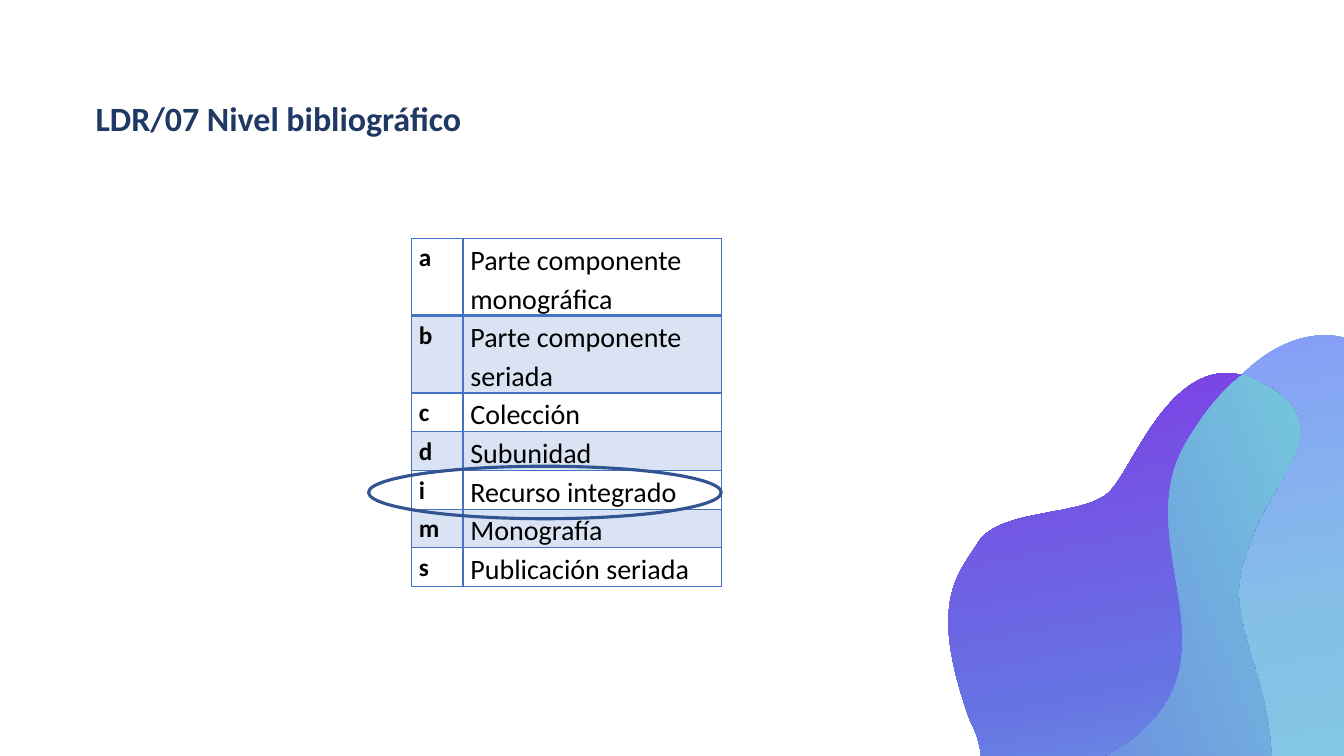
from copy import deepcopy
from math import cos, radians, sin

from pptx import Presentation
from pptx.dml.color import RGBColor
from pptx.enum.shapes import MSO_SHAPE
from pptx.enum.text import MSO_ANCHOR
from pptx.oxml.ns import qn
from pptx.oxml.xmlchemy import OxmlElement
from pptx.util import Emu, Pt

ELLIPSE = MSO_SHAPE.OVAL
MIDDLE = MSO_ANCHOR.MIDDLE
PX = 9525  # EMU per px, 1280 x 720 px slide
FONT = "Calibri"
BLOB_ROTATION = 52.2

NAVY = RGBColor(0x20, 0x38, 0x64)
BLACK = RGBColor(0x00, 0x00, 0x00)
BORDER_BLUE = RGBColor(0x44, 0x72, 0xC4)
BAND_BLUE = RGBColor(0xDA, 0xE3, 0xF3)
RING_BLUE = RGBColor(0x32, 0x54, 0x91)
AQUA = RGBColor(0x80, 0xDE, 0xDE)
SKY = RGBColor(0x85, 0xC1, 0xE7)
PERIWINKLE = RGBColor(0x87, 0x8C, 0xFF)
MINT = RGBColor(0x7C, 0xEF, 0xD8)
INDIGO = RGBColor(0x66, 0x72, 0xE4)
VIOLET = RGBColor(0x88, 0x2B, 0xE5)

LEVELS = [
    ("a", "Parte componente monográfica"),
    ("b", "Parte componente seriada"),
    ("c", "Colección"),
    ("d", "Subunidad"),
    ("i", "Recurso integrado"),
    ("m", "Monografía"),
    ("s", "Publicación seriada"),
]
COLUMN_WIDTHS = (49, 246)
TABLE_HEIGHT = 331
ROW_HEIGHT = 20  # rows grow to fit their text

# Bezier outlines as they lie on the slide:
# a start point, then two handles and an end point per curve
SHARED_EDGE = [
    (1096, 889), (1253, 835), (1210, 681), (1192, 626),
    (1176, 570), (1174, 556), (1196, 503),
    (1218, 450), (1277, 402), (1198, 363),
]
SKY_BLOB = [
    (1021, 729), (1236, 645), (1076, 520), (1142, 410),
    (1208, 299), (1283, 312), (1304, 335),
    (1325, 357), (1329, 380), (1297, 418),
    (1265, 454), (1331, 525), (1375, 573),
    (1419, 622), (1436, 732), (1330, 753),
    (1222, 774), (1228, 773), (1176, 859),
    (1124, 945), (1063, 942), (1063, 942),
    (1063, 942), (959, 930), (946, 846),
    (932, 760), (1021, 729), (1021, 729),
]
VIOLET_BLOB = [
    (902, 859), (902, 859), (939, 943), *SHARED_EDGE,
    (1119, 324), (1080, 447), (1056, 469),
    (1032, 492), (953, 484), (932, 516),
    (912, 548), (883, 573), (924, 687),
    (924, 687), (957, 739), (908, 799),
    (908, 799), (882, 835), (902, 859),
]
OVERLAP_BLOB = [
    (1096, 889), (1025, 913), (978, 909), (949, 898),
    (942, 887), (936, 874), (933, 857),
    (920, 772), (1009, 741), (1009, 741),
    (1224, 658), (1064, 532), (1130, 421),
    (1147, 392), (1165, 371), (1183, 357),
    (1188, 358), (1193, 360), *SHARED_EDGE[::-1],
]


def px(*lengths):
    return [Emu(length * PX) for length in lengths]


def write_run(paragraph, text, size, color, bold):
    run = paragraph.add_run()
    run.text = text
    run.font.name = FONT
    run.font.size = Pt(size)
    run.font.bold = bold
    run.font.color.rgb = color


def turn_back(outline, box):
    """Outline before rotation, in EMU from the corner of its box."""
    left, top, width, height = box
    c, s = cos(radians(BLOB_ROTATION)), sin(radians(BLOB_ROTATION))
    points = []
    for x, y in outline:
        dx, dy = x - left - width / 2, y - top - height / 2
        points.append((round(PX * (width / 2 + c * dx + s * dy)),
                       round(PX * (height / 2 - s * dx + c * dy))))
    return points


def add_blob(slide, outline, box, stops, angle):
    points = turn_back(outline, box)
    builder = slide.shapes.build_freeform(*points[0], scale=1.0)
    builder.add_line_segments(points[3::3], close=True)
    shape = builder.convert_to_shape()
    shape.left, shape.top, shape.width, shape.height = px(*box)
    shape.rotation = BLOB_ROTATION
    shape.shadow.inherit = False
    shape.line.fill.background()

    # Turn the straight segments into Bezier curves
    contour = shape._element.spPr.find(".//" + qn("a:path"))
    contour.set("w", str(shape.width))
    contour.set("h", str(shape.height))
    for child in list(contour):
        contour.remove(child)
    commands = [("a:moveTo", points[:1])]
    commands += [("a:cubicBezTo", points[first:first + 3])
                 for first in range(1, len(points), 3)]
    for tag, command_points in commands + [("a:close", [])]:
        command = OxmlElement(tag)
        for x, y in command_points:
            point = OxmlElement("a:pt")
            point.set("x", str(x))
            point.set("y", str(y))
            command.append(point)
        contour.append(command)

    # A new gradient has two stops; a third is needed
    shape.fill.gradient()
    shape.fill.gradient_angle = angle
    stop_list = shape._element.spPr.find(".//" + qn("a:gsLst"))
    stop_list.insert(1, deepcopy(stop_list[0]))
    for stop, (position, color) in zip(shape.fill.gradient_stops, stops):
        stop.position = position
        stop.color.rgb = color


def add_title(slide, text):
    box = slide.shapes.add_textbox(*px(91, 83, 487, 60))
    frame = box.text_frame
    frame.word_wrap = True
    frame.vertical_anchor = MIDDLE
    frame.margin_left = frame.margin_right = frame.margin_bottom = 0
    frame.margin_top, = px(4)
    paragraph = frame.paragraphs[0]
    paragraph.line_spacing = 0.9
    write_run(paragraph, text, 24.3, NAVY, True)


def add_border(cell, side, width):
    line = OxmlElement("a:" + side)
    line.set("w", str(Pt(width)))
    fill = OxmlElement("a:solidFill")
    color = OxmlElement("a:srgbClr")
    color.set("val", str(BORDER_BLUE))
    fill.append(color)
    line.append(fill)
    cell._tc.get_or_add_tcPr().append(line)


def fill_cell(cell, text, row, is_code):
    cell.margin_left, cell.margin_right = px(7, 7)
    cell.margin_top = cell.margin_bottom = 0
    for side in ("lnL", "lnR", "lnT", "lnB"):
        under_first_row = (row, side) in ((0, "lnB"), (1, "lnT"))
        add_border(cell, side, 2 if under_first_row else 1)
    if row % 2:
        cell.fill.solid()
        cell.fill.fore_color.rgb = BAND_BLUE
    else:
        cell.fill.background()
    paragraph = cell.text_frame.paragraphs[0]
    paragraph.line_spacing = 1.15
    write_run(paragraph, text, 18 if is_code else 20, BLACK, is_code)


def add_level_table(slide):
    frame = slide.shapes.add_table(
        len(LEVELS), len(COLUMN_WIDTHS),
        *px(392, 227, sum(COLUMN_WIDTHS), TABLE_HEIGHT))
    table = frame.table
    table.first_row = table.horz_banding = False
    for column, width in zip(table.columns, px(*COLUMN_WIDTHS)):
        column.width = width
    for row, texts in enumerate(LEVELS):
        table.rows[row].height, = px(ROW_HEIGHT)
        for column, text in enumerate(texts):
            fill_cell(table.cell(row, column), text, row, column == 0)
    frame.height, = px(TABLE_HEIGHT)


def add_ring(slide):
    shape = slide.shapes.add_shape(ELLIPSE, *px(351, 444, 336, 50))
    shape.shadow.inherit = False
    shape.fill.background()
    shape.line.color.rgb = RING_BLUE
    shape.line.width = Pt(2.25)


def main():
    presentation = Presentation()
    presentation.slide_width, presentation.slide_height = px(1280, 720)
    slide = presentation.slides.add_slide(presentation.slide_layouts[6])

    # Heading
    add_title(slide, "LDR/07 Nivel bibliográfico")

    # Corner decoration, back to front
    add_blob(slide, SKY_BLOB, (906, 331, 482, 640),
             [(0, AQUA), (0.54, SKY), (1, PERIWINKLE)], 153)
    add_blob(slide, VIOLET_BLOB, (849, 353, 487, 598),
             [(0, MINT), (0.51, INDIGO), (1, VIOLET)], 153)
    add_blob(slide, OVERLAP_BLOB, (916, 386, 420, 563),
             [(0, VIOLET), (0.19, INDIGO), (1, MINT)], 73)

    # Level codes, with the integrating resource ringed
    add_level_table(slide)
    add_ring(slide)

    presentation.save("out.pptx")


if __name__ == "__main__":
    main()
